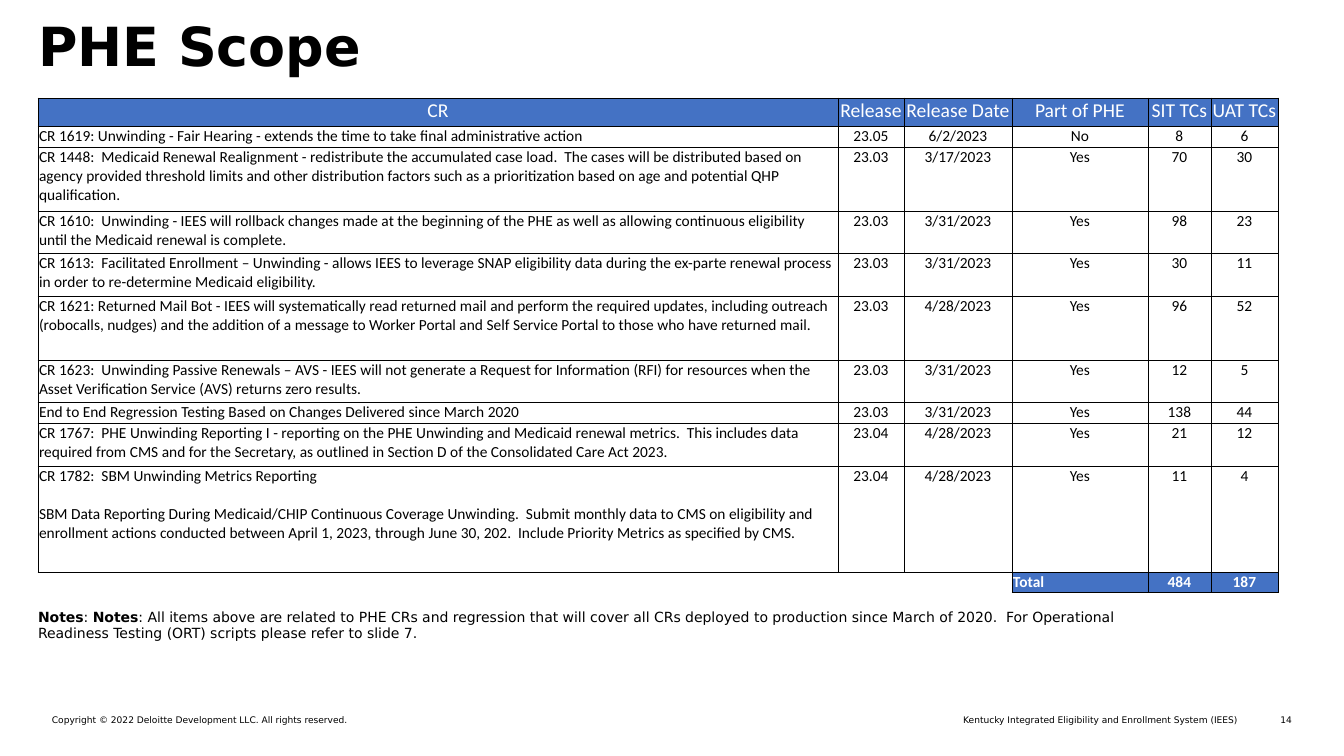
import pptx
import pptx.util
import pptx.dml.color
import pptx.enum.text
import pptx.oxml.ns
import lxml.etree

EMU_PER_PX = 914400 / 100.8
COLORS = {"ink": "000000", "header": "4472C4", "header_text": "FFFFFF"}
SANS = "DejaVu Sans"
TABLE_FONT = "Calibri"
ALIGN = pptx.enum.text.PP_ALIGN
ANCHOR = pptx.enum.text.MSO_ANCHOR

COLUMN_WIDTHS = [800, 66, 108, 136, 63, 67]
ROW_HEIGHTS = [28, 21, 64, 42, 43, 64, 42, 21, 43, 106, 21]
HEADINGS = ["CR", "Release", "Release Date", "Part of PHE", "SIT TCs", "UAT TCs"]
CHANGE_REQUESTS = [
    ["CR 1619: Unwinding - Fair Hearing - extends the time to take final administrative action",
     "23.05", "6/2/2023", "No", "8", "6"],
    ["CR 1448:  Medicaid Renewal Realignment - redistribute the accumulated case load.  "
     "The cases will be distributed based on agency provided threshold limits and other "
     "distribution factors such as a prioritization based on age and potential QHP qualification.",
     "23.03", "3/17/2023", "Yes", "70", "30"],
    ["CR 1610:  Unwinding - IEES will rollback changes made at the beginning of the PHE as well "
     "as allowing continuous eligibility until the Medicaid renewal is complete.",
     "23.03", "3/31/2023", "Yes", "98", "23"],
    ["CR 1613:  Facilitated Enrollment – Unwinding - allows IEES to leverage SNAP eligibility data "
     "during the ex-parte renewal process in order to re-determine Medicaid eligibility.",
     "23.03", "3/31/2023", "Yes", "30", "11"],
    ["CR 1621: Returned Mail Bot - IEES will systematically read returned mail and perform the "
     "required updates, including outreach (robocalls, nudges) and the addition of a message to "
     "Worker Portal and Self Service Portal to those who have returned mail.",
     "23.03", "4/28/2023", "Yes", "96", "52"],
    ["CR 1623:  Unwinding Passive Renewals – AVS - IEES will not generate a Request for Information "
     "(RFI) for resources when the Asset Verification Service (AVS) returns zero results.",
     "23.03", "3/31/2023", "Yes", "12", "5"],
    ["End to End Regression Testing Based on Changes Delivered since March 2020",
     "23.03", "3/31/2023", "Yes", "138", "44"],
    ["CR 1767:  PHE Unwinding Reporting I - reporting on the PHE Unwinding and Medicaid renewal "
     "metrics.  This includes data required from CMS and for the Secretary, as outlined in "
     "Section D of the Consolidated Care Act 2023.",
     "23.04", "4/28/2023", "Yes", "21", "12"],
    ["CR 1782:  SBM Unwinding Metrics Reporting\n"
     "SBM Data Reporting During Medicaid/CHIP Continuous Coverage Unwinding.  Submit monthly data "
     "to CMS on eligibility and enrollment actions conducted between April 1, 2023, through "
     "June 30, 202.  Include Priority Metrics as specified by CMS.",
     "23.04", "4/28/2023", "Yes", "11", "4"],
]
TOTALS = ["", "", "", "Total", "484", "187"]
NOTES = [
    ("Notes", True), (": ", False), ("Notes", True),
    (": All items above are related to PHE CRs and regression that will cover all CRs deployed "
     "to production since March of 2020.  For Operational Readiness Testing (ORT) scripts "
     "please refer to slide 7.", False),
]


def px(length):
    return pptx.util.Emu(round(length * EMU_PER_PX))


def rgb(name):
    return pptx.dml.color.RGBColor.from_string(COLORS[name])


def style_run(run, family, size, color="ink", bold=False):
    run.font.name = family
    run.font.size = pptx.util.Pt(size)
    run.font.bold = bold
    run.font.color.rgb = rgb(color)


def clear_margins(frame):
    frame.margin_left = frame.margin_right = frame.margin_top = frame.margin_bottom = 0
    frame.word_wrap = True
    frame.auto_size = pptx.enum.text.MSO_AUTO_SIZE.NONE


def add_title(slide, text):
    title = slide.shapes.title
    title.left, title.top, title.width, title.height = px(38), px(42), px(1241), px(37)
    frame = title.text_frame
    frame.text = text
    clear_margins(frame)
    frame.vertical_anchor = ANCHOR.BOTTOM
    heading = frame.paragraphs[0]
    heading.alignment = ALIGN.LEFT
    heading.line_spacing = 0.95
    style_run(heading.runs[0], SANS, 38.5, bold=True)


def add_text(slide, left, top, width, height, pieces, size, align=ALIGN.LEFT, spacing=1.0):
    frame = slide.shapes.add_textbox(px(left), px(top), px(width), px(height)).text_frame
    clear_margins(frame)
    paragraph = frame.paragraphs[0]
    paragraph.alignment = align
    paragraph.line_spacing = spacing
    for text, bold in pieces:
        run = paragraph.add_run()
        run.text = text
        style_run(run, SANS, size, bold=bold)


def set_borders(cell, sides):
    properties = cell._tc.get_or_add_tcPr()
    qn = pptx.oxml.ns.qn
    for side in "LRTB":
        line = lxml.etree.SubElement(properties, qn("a:ln" + side), w="6350")
        if side in sides:
            solid = lxml.etree.SubElement(line, qn("a:solidFill"))
            lxml.etree.SubElement(solid, qn("a:srgbClr"), val=COLORS["ink"])
        else:
            lxml.etree.SubElement(line, qn("a:noFill"))


def fill_cell(cell, text, size, align, filled=False, bold=False, sides="LRTB"):
    cell.margin_left = cell.margin_right = cell.margin_top = px(1)
    cell.margin_bottom = 0
    cell.vertical_anchor = ANCHOR.TOP
    set_borders(cell, sides)
    if filled:
        cell.fill.solid()
        cell.fill.fore_color.rgb = rgb("header")
    else:
        cell.fill.background()
    cell.text_frame.text = text
    for position, paragraph in enumerate(cell.text_frame.paragraphs):
        paragraph.alignment = align
        if position:
            paragraph.space_before = pptx.util.Pt(13.5)
        for run in paragraph.runs:
            style_run(run, TABLE_FONT, size, "header_text" if filled else "ink", bold)
        if not text:
            lxml.etree.SubElement(paragraph._p, pptx.oxml.ns.qn("a:endParaRPr"), sz=str(size * 100))


def add_scope_table(slide):
    rows = [HEADINGS, *CHANGE_REQUESTS, TOTALS]
    scope = slide.shapes.add_table(len(rows), len(HEADINGS), px(38), px(98),
                                   px(sum(COLUMN_WIDTHS)), px(sum(ROW_HEIGHTS))).table
    scope.first_row = scope.horz_banding = False
    for column, width in zip(scope.columns, COLUMN_WIDTHS):
        column.width = px(width)
    for row, height in zip(scope.rows, ROW_HEIGHTS):
        row.height = px(height)
    last = len(rows) - 1
    for r, values in enumerate(rows):
        for c, value in enumerate(values):
            left_aligned = (c == 0 and r > 0) or value == "Total"
            fill_cell(scope.cell(r, c), value, 14 if r == 0 else 11,
                      ALIGN.LEFT if left_aligned else ALIGN.CENTER,
                      filled=r == 0 or (r == last and value != ""),
                      bold=r == last, sides="LRTB" if value else "TR")
    scope.cell(last, 0).merge(scope.cell(last, 2))


def main():
    deck = pptx.Presentation()
    deck.slide_width, deck.slide_height = px(1344), px(756)
    slide = deck.slides.add_slide(deck.slide_layouts[5])
    add_title(slide, "PHE Scope")
    add_scope_table(slide)
    add_text(slide, 38, 610, 1131, 48, NOTES, 10, spacing=0.95)
    footers = [
        (52, 591, "Copyright © 2022 Deloitte Development LLC. All rights reserved.", ALIGN.LEFT),
        (699, 539, "Kentucky Integrated Eligibility and Enrollment System (IEES)", ALIGN.RIGHT),
        (1258, 34, "14", ALIGN.RIGHT),
    ]
    for left, width, text, align in footers:
        add_text(slide, left, 714, width, 11, [(text, False)], 6.5, align)
    deck.save("out.pptx")


if __name__ == "__main__":
    main()
